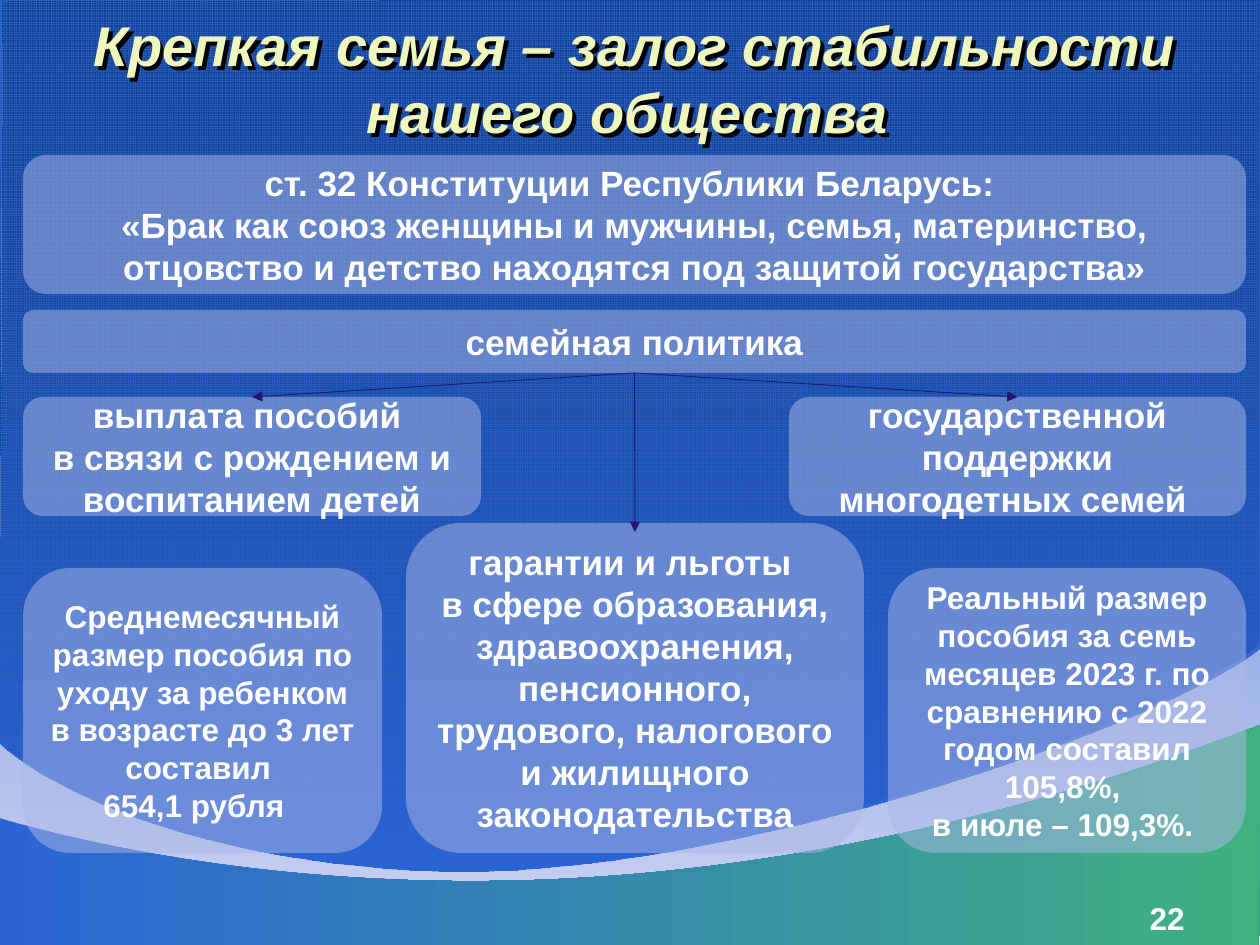
from lxml.etree import SubElement
from pptx import Presentation
from pptx.dml.color import RGBColor
from pptx.enum.dml import MSO_PATTERN
from pptx.enum.shapes import MSO_CONNECTOR, MSO_SHAPE
from pptx.enum.text import MSO_ANCHOR as Anchor, PP_ALIGN as Align
from pptx.oxml.ns import qn
from pptx.util import Inches, Pt

PX = Inches(1) / 126
BLUE = RGBColor(0x2B, 0x64, 0xD5)
NAVY = RGBColor(0x00, 0x3D, 0x7B)
DUSK = RGBColor(0x1F, 0x48, 0x98)
PALE = RGBColor(0xCE, 0xD4, 0xF0)
GREEN = RGBColor(0x3F, 0xB1, 0x80)
PANEL = RGBColor(0xAC, 0xB8, 0xE7)
CREAM = RGBColor(0xF0, 0xF7, 0xBD)
WHITE = RGBColor(0xFF, 0xFF, 0xFF)
VIOLET = RGBColor(0x28, 0x14, 0x72)


def write(shape, text, size=20, color=WHITE, italic=False,
          align=Align.CENTER, anchor=Anchor.MIDDLE):
    """Fill a shape with bold text; \\v breaks a line, \\n starts a paragraph."""
    frame = shape.text_frame
    frame.word_wrap = True
    frame.vertical_anchor = anchor
    frame.text = text
    for para in frame.paragraphs:
        para.alignment = align
        for span in para.runs:
            font = span.font
            font.name, font.size = "Arial", Pt(size)
            font.bold, font.italic = True, italic
            font.color.rgb = color


def add_band(start, handles, corners):
    """Draw a closed outline: two cubic curves (six handles), then straight corners."""
    builder = page.shapes.build_freeform(*start, scale=PX)
    builder.add_line_segments(handles + corners, close=True)
    band = builder.convert_to_shape()
    lines = list(band.element.iter(qn("a:lnTo")))
    for first in (0, 3):
        group = lines[first:first + 3]
        curve = SubElement(group[0].getparent(), qn("a:cubicBezTo"))
        group[0].addprevious(curve)
        for line in group:
            curve.append(line[0])
            line.getparent().remove(line)
    band.shadow.inherit = False
    band.line.fill.background()
    return band


deck = Presentation()
deck.slide_width, deck.slide_height = Inches(10), Inches(7.5)
page = deck.slides.add_slide(deck.slide_layouts[6])

# Backdrop: a fine grid, a shade over it and a green wave at the foot
grid = add_band((-1, 742),
                [(14, 757), (139, 856), (431, 869),
                 (722, 881), (1177, 716), (1259, 645)],
                [(1259, -3), (0, -1), (1, 1)])
grid.fill.patterned()
grid.fill.pattern = MSO_PATTERN.SMALL_GRID
grid.fill.fore_color.rgb = BLUE
grid.fill.back_color.rgb = NAVY

shade = add_band((0, 743),
                 [(15, 759), (141, 858), (432, 871),
                  (725, 883), (1179, 718), (1260, 648)],
                 [(1260, -1), (3, 1), (4, 3)])
wave = add_band((-1, 818),
                [(14, 822), (163, 869), (384, 879),
                 (606, 890), (910, 861), (1260, 725)],
                [(1259, 945), (-4, 945)])

for fill, first, last, angle in [(page.background.fill, BLUE, PALE, 270),
                                 (shade.fill, DUSK, BLUE, 270),
                                 (wave.fill, BLUE, GREEN, 0)]:
    fill.gradient()
    fill.gradient_angle = angle
    for stop, color, position in zip(fill.gradient_stops, (first, last), (0, 1)):
        stop.color.rgb = color
        stop.position = position
top_color = next(shade.element.iter(qn("a:srgbClr")))
SubElement(top_color, qn("a:alpha"), val="46000")

# Page number and title
number = page.shapes.add_textbox(*(round(v * PX) for v in (903, 893, 294, 34)))
write(number, "22", size=18, align=Align.RIGHT, anchor=Anchor.TOP)

title = page.shapes.add_textbox(*(round(v * PX) for v in (5, 0, 1260, 155)))
write(title, "Крепкая семья – залог стабильности нашего общества ",
      size=32, color=CREAM, italic=True)
effects = SubElement(title.element.spPr, qn("a:effectLst"))
shadow = SubElement(effects, qn("a:outerShdw"), dist="40000", dir="2700000", algn="ctr")
SubElement(shadow, qn("a:srgbClr"), val="000000")

# Panels: left, top, width, height, text size, text
PANELS = {
    "article": (23, 155, 1223, 139, 20,
                "ст. 32 Конституции Республики Беларусь: \n"
                "«Брак как союз женщины и мужчины, семья, материнство, "
                "отцовство и детство находятся под защитой государства»"),
    "policy": (23, 310, 1223, 63, 20, "семейная политика"),
    "benefits": (23, 397, 458, 119, 20,
                 "выплата пособий \vв связи с рождением и воспитанием детей"),
    "support": (789, 397, 457, 119, 20,
                "государственной поддержки многодетных семей "),
    "guarantees": (406, 523, 458, 330, 20,
                   "гарантии и льготы \vв сфере образования, здравоохранения, "
                   "пенсионного, трудового, налогового и жилищного законодательства"),
    "average": (23, 568, 359, 285, 18,
                "Среднемесячный размер пособия по уходу за ребенком "
                "в возрасте до 3 лет составил \v654,1 рубля  "),
    "real": (888, 568, 358, 285, 18,
             "Реальный размер пособия за семь месяцев 2023 г. по сравнению "
             "с 2022 годом составил 105,8%, \vв июле – 109,3%. "),
}
boxes = {}
for name, (left, top, width, height, size, text) in PANELS.items():
    box = page.shapes.add_shape(MSO_SHAPE.ROUNDED_RECTANGLE,
                                *(round(v * PX) for v in (left, top, width, height)))
    box.shadow.inherit = False
    box.line.fill.background()
    box.fill.solid()
    box.fill.fore_color.rgb = PANEL
    panel_color = next(box.element.spPr.iter(qn("a:srgbClr")))
    SubElement(panel_color, qn("a:alpha"), val="50000")
    write(box, text, size=size)
    boxes[name] = box

# Arrows from the policy bar; the middle one reaches just inside its panel
for x, y, target in [(252, 397, "benefits"), (635, 532, None), (1017, 397, "support")]:
    arrow = page.shapes.add_connector(MSO_CONNECTOR.STRAIGHT,
                                      *(round(v * PX) for v in (635, 373, x, y)))
    arrow.begin_connect(boxes["policy"], 2)
    if target:
        arrow.end_connect(boxes[target], 0)
    arrow.line.color.rgb = VIOLET
    arrow.line.width = Pt(0.5)
    SubElement(arrow.line._get_or_add_ln(), qn("a:tailEnd"), type="triangle")
    SubElement(arrow.element.spPr, qn("a:effectLst"))

deck.save("out.pptx")
